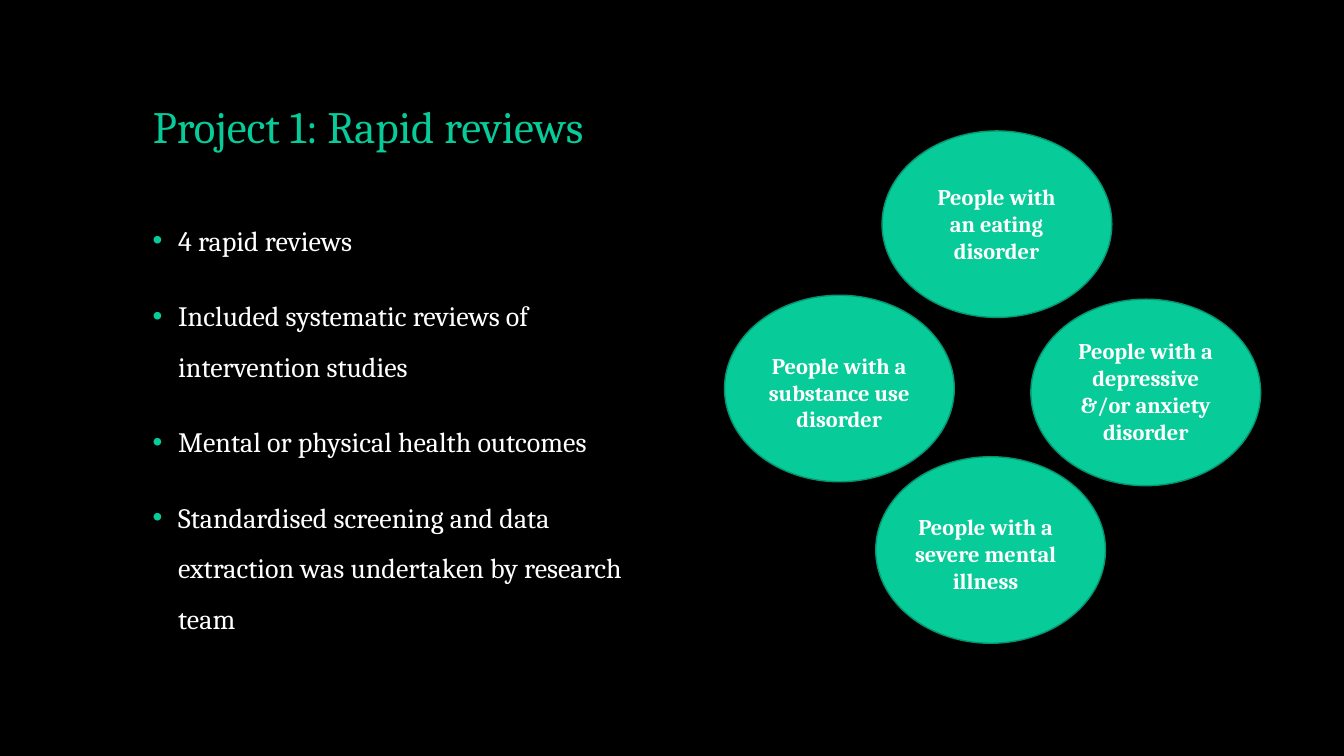
import dataclasses

import pptx
import pptx.dml.color
import pptx.enum.shapes
import pptx.enum.text
import pptx.oxml
import pptx.oxml.ns
import pptx.util

Cm = pptx.util.Cm
Pt = pptx.util.Pt


@dataclasses.dataclass(frozen=True)
class Theme:
    """Colours, font and type sizes of the slide."""
    background: str = "000000"
    accent: str = "07CB98"
    outline: str = "059670"
    text: str = "FFFFFF"
    font: str = "Cambria"
    title_size: int = 32
    body_size: int = 20
    label_size: int = 16


class SlideBuilder:
    """Adds styled elements to one slide."""

    def __init__(self, slide, theme):
        """Keep the slide and theme, and paint the background."""
        self.slide = slide
        self.theme = theme
        self.paint(slide.background.fill, theme.background)

    def paint(self, fill, colour):
        """Make a fill solid in one colour."""
        fill.solid()
        fill.fore_color.rgb = pptx.dml.color.RGBColor.from_string(colour)

    def style(self, paragraph, size, colour, align, bold=False):
        """Set the font and alignment of a paragraph."""
        paragraph.alignment = align
        font = paragraph.font
        font.name, font.size, font.bold = self.theme.font, Pt(size), bold
        font.color.rgb = pptx.dml.color.RGBColor.from_string(colour)

    def text_box(self, left, top, width, height):
        """Add a wrapping text box and return its frame."""
        box = self.slide.shapes.add_textbox(Cm(left), Cm(top), Cm(width), Cm(height))
        box.text_frame.word_wrap = True
        return box.text_frame

    def title(self, wording, left, top, width, height):
        """Place and format the title placeholder."""
        heading = self.slide.shapes.title
        heading.left, heading.top = Cm(left), Cm(top)
        heading.width, heading.height = Cm(width), Cm(height)
        frame = heading.text_frame
        frame.text = wording
        frame.auto_size = pptx.enum.text.MSO_AUTO_SIZE.NONE
        frame.vertical_anchor = pptx.enum.text.MSO_ANCHOR.BOTTOM
        paragraph = frame.paragraphs[0]
        paragraph.line_spacing = 0.9
        self.style(paragraph, self.theme.title_size, self.theme.accent,
                   pptx.enum.text.PP_ALIGN.LEFT)

    def bullets(self, points, left, top, width, height):
        """Add a bulleted list."""
        frame = self.text_box(left, top, width, height)
        frame.text = "\n".join(points)
        for paragraph in frame.paragraphs:
            paragraph.line_spacing = 1.5
            paragraph.space_before = Pt(18)
            self.style(paragraph, self.theme.body_size, self.theme.text,
                       pptx.enum.text.PP_ALIGN.LEFT)
            self.bullet(paragraph)

    def bullet(self, paragraph):
        """Give a paragraph a hanging accent-coloured bullet."""
        properties = paragraph._p.get_or_add_pPr()
        indent = Cm(0.64)
        properties.set("marL", str(indent))
        properties.set("indent", str(-indent))
        namespace = pptx.oxml.ns.nsdecls("a")
        markup = (
            f'<a:buClr {namespace}><a:srgbClr val="{self.theme.accent}"/></a:buClr>',
            f'<a:buFont {namespace} typeface="Arial"/>',
            f'<a:buChar {namespace} char="•"/>',
        )
        before_font = properties.find(pptx.oxml.ns.qn("a:defRPr"))
        for item in markup:
            before_font.addprevious(pptx.oxml.parse_xml(item))

    def ellipse(self, left, top, width, height):
        """Add a filled ellipse with a thin outline."""
        oval = self.slide.shapes.add_shape(
            pptx.enum.shapes.MSO_SHAPE.OVAL, Cm(left), Cm(top), Cm(width), Cm(height))
        oval.shadow.inherit = False
        self.paint(oval.fill, self.theme.accent)
        self.paint(oval.line.fill, self.theme.outline)
        oval.line.width = Pt(1)

    def label(self, wording, left, top, width, height):
        """Add a bold centred label."""
        frame = self.text_box(left, top, width, height)
        frame.text = wording
        frame.auto_size = pptx.enum.text.MSO_AUTO_SIZE.SHAPE_TO_FIT_TEXT
        self.style(frame.paragraphs[0], self.theme.label_size, self.theme.text,
                   pptx.enum.text.PP_ALIGN.CENTER, bold=True)


REVIEW_POINTS = (
    "4 rapid reviews",
    "Included systematic reviews of intervention studies",
    "Mental or physical health outcomes",
    "Standardised screening and data extraction was undertaken by research team",
)
POPULATIONS = (
    ("People with an eating disorder", (22.23, 3.3), (23.06, 4.5, 4.11, 2.31)),
    ("People with a depressive &/or anxiety disorder", (25.98, 7.54),
     (26.64, 8.38, 4.47, 3)),
    ("People with a severe mental illness", (22.07, 11.51), (22.07, 12.8, 5.54, 2.31)),
    ("People with a substance use disorder", (18.26, 7.44), (18.52, 8.74, 5.26, 2.31)),
)
ELLIPSE_SIZE = (5.79, 4.7)


def main():
    """Build the slide and save the presentation."""
    deck = pptx.Presentation()
    deck.slide_width, deck.slide_height = Cm(33.87), Cm(19.05)
    title_only = deck.slide_layouts.get_by_name("Title Only")
    builder = SlideBuilder(deck.slides.add_slide(title_only), Theme())
    builder.title("Project 1: Rapid reviews", 3.6, 1.02, 26.67, 2.97)
    builder.bullets(REVIEW_POINTS, 3.6, 5.08, 12.7, 11.4)
    for population, corner, label_area in POPULATIONS:
        builder.ellipse(*corner, *ELLIPSE_SIZE)
        builder.label(population, *label_area)
    deck.save("out.pptx")


if __name__ == "__main__":
    main()
